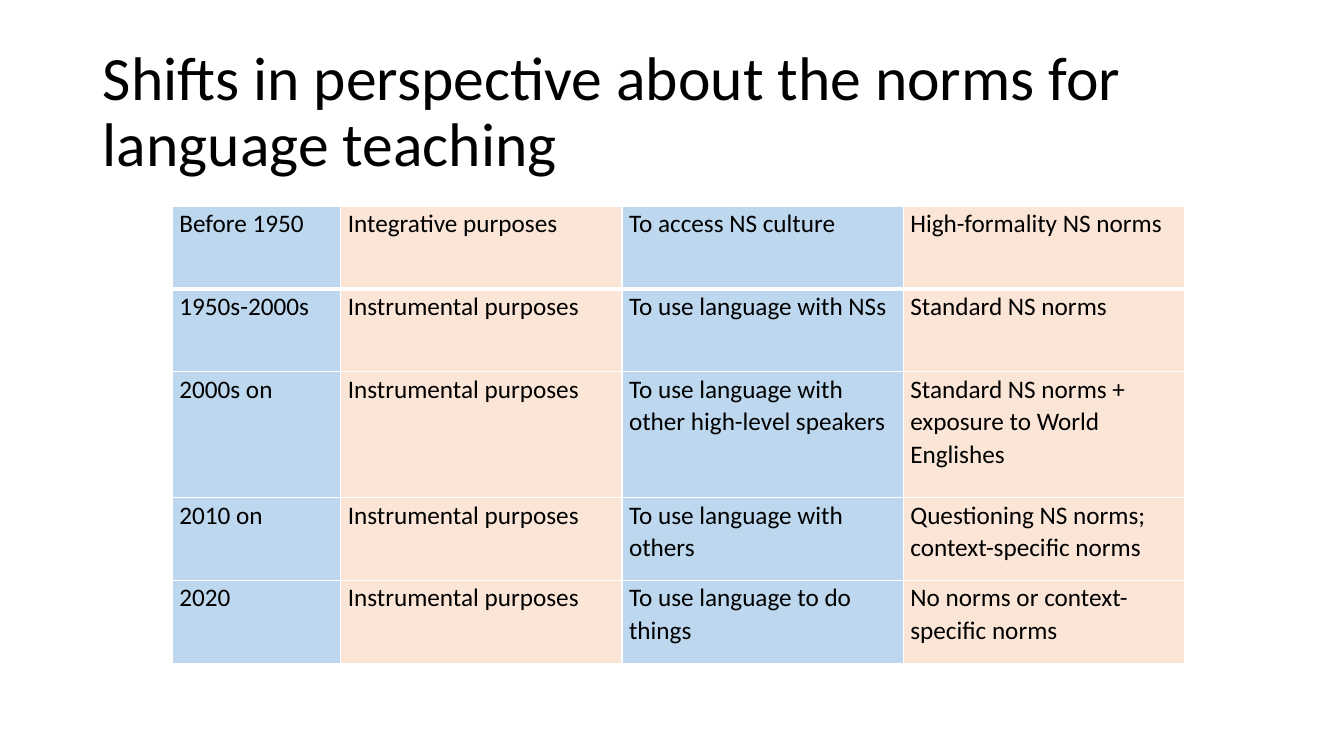
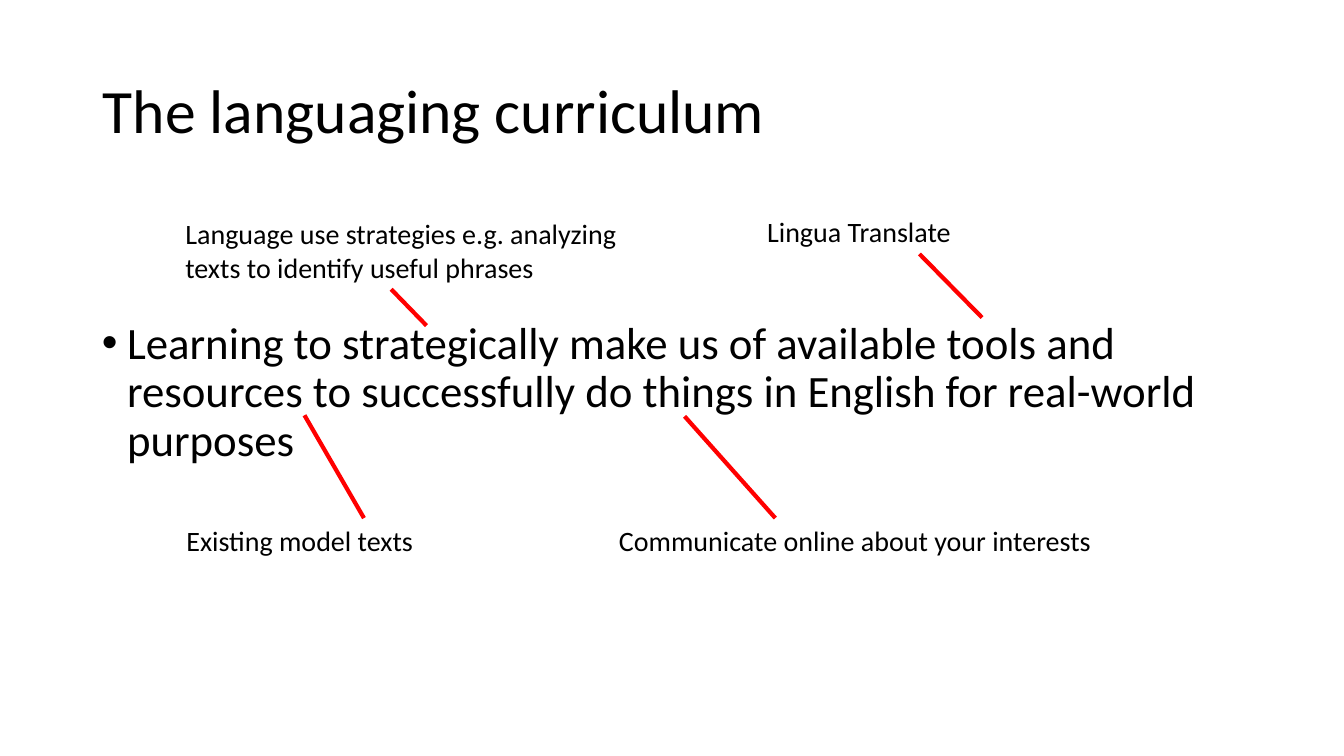
"""Build two slides on norms for language teaching and the languaging curriculum."""
from lxml.etree import SubElement
from pptx import Presentation
from pptx.dml.color import RGBColor
from pptx.enum.shapes import MSO_CONNECTOR as Connector
from pptx.enum.text import MSO_ANCHOR as Anchor, MSO_AUTO_SIZE as AutoSize, PP_ALIGN as Align
from pptx.oxml import parse_xml
from pptx.oxml.ns import nsdecls, qn
from pptx.util import Inches, Pt

BLACK, WHITE, RED = "000000", "FFFFFF", "FF0000"
BLUE, PEACH = "BDD7EE", "FBE5D6"
TITLE_ONLY, TITLE_AND_BODY = 5, 1


def color(value):
    return RGBColor.from_string(value)


def write_text(frame, text, size=20, ink=BLACK, font="Calibri", spacing=1.0,
               before=0, anchor=Anchor.TOP, fit=AutoSize.NONE):
    frame.word_wrap = True
    frame.auto_size = fit
    frame.vertical_anchor = anchor
    paragraph = frame.paragraphs[0]
    paragraph.alignment = Align.LEFT
    paragraph.line_spacing = spacing
    paragraph.space_before = Pt(before)
    run = paragraph.add_run()
    run.text = text
    run.font.size = Pt(size)
    run.font.name = font
    run.font.color.rgb = color(ink)
    return paragraph


class Deck:
    def __init__(self):
        self.presentation = Presentation()
        self.presentation.slide_width = Inches(13.33)
        self.presentation.slide_height = Inches(7.5)
        self.slide = None

    def add_slide(self, title, layout):
        layouts = self.presentation.slide_layouts
        self.slide = self.presentation.slides.add_slide(layouts[layout])
        shape = self.slide.shapes.title
        self.place(shape, 0.92, 0.4, 11.5, 1.45)
        write_text(shape.text_frame, title, size=44, spacing=0.9, anchor=Anchor.MIDDLE)

    def place(self, shape, left, top, width, height):
        shape.left, shape.top = Inches(left), Inches(top)
        shape.width, shape.height = Inches(width), Inches(height)

    def add_bullet(self, text, left, top, width, height):
        shape = self.slide.placeholders[1]
        self.place(shape, left, top, width, height)
        paragraph = write_text(shape.text_frame, text, size=32, spacing=0.9, before=10)
        properties = paragraph._p.get_or_add_pPr()
        properties.set("marL", str(Inches(0.25)))
        properties.set("indent", str(-Inches(0.25)))

    def add_note(self, text, left, top, width, height):
        shape = self.slide.shapes.add_textbox(
            Inches(left), Inches(top), Inches(width), Inches(height))
        write_text(shape.text_frame, text, fit=AutoSize.SHAPE_TO_FIT_TEXT)

    def add_line(self, start, end):
        connector = self.slide.shapes.add_connector(
            Connector.STRAIGHT, *map(Inches, (*start, *end)))
        connector.line.color.rgb = color(RED)
        connector.line.width = Pt(3)
        SubElement(connector._element.spPr, qn("a:effectLst"))

    def add_table(self, rows, left, top, widths, heights, fills):
        table = self.slide.shapes.add_table(
            len(rows), len(widths), Inches(left), Inches(top),
            Inches(sum(widths)), Inches(sum(heights))).table
        table.first_row = table.horz_banding = False
        for column, width in zip(table.columns, widths):
            column.width = Inches(width)
        for row, height in zip(table.rows, heights):
            row.height = Inches(height)
        for row_index, texts in enumerate(rows):
            top_line = 3 if row_index == 1 else 1
            bottom_line = 3 if row_index == 0 else 1
            for column_index, text in enumerate(texts):
                cell = table.cell(row_index, column_index)
                self.fill_cell(cell, text, fills[column_index % len(fills)])
                self.border_cell(cell, L=1, R=1, T=top_line, B=bottom_line)

    def fill_cell(self, cell, text, fill):
        cell.margin_left = cell.margin_right = Inches(0.07)
        cell.margin_top = cell.margin_bottom = 0
        cell.fill.solid()
        cell.fill.fore_color.rgb = color(fill)
        write_text(cell.text_frame, text, size=18, spacing=1.07)

    def border_cell(self, cell, **widths):
        properties = cell._tc.get_or_add_tcPr()
        for index, (side, width) in enumerate(widths.items()):
            properties.insert(index, parse_xml(
                f'<a:ln{side} {nsdecls("a")} w="{Pt(width)}"><a:solidFill>'
                f'<a:srgbClr val="{WHITE}"/></a:solidFill></a:ln{side}>'))


def main():
    deck = Deck()

    deck.add_slide("Shifts in perspective about the norms for language teaching", TITLE_ONLY)
    instrumental = "Instrumental purposes"
    periods = [
        ("Before 1950", "Integrative purposes", "To access NS culture",
         "High-formality NS norms"),
        ("1950s-2000s", instrumental, "To use language with NSs", "Standard NS norms"),
        ("2000s on", instrumental, "To use language with other high-level speakers",
         "Standard NS norms + exposure to World Englishes"),
        ("2010 on", instrumental, "To use language with others",
         "Questioning NS norms; context-specific norms"),
        ("2020", instrumental, "To use language to do things",
         "No norms or context-specific norms"),
    ]
    deck.add_table(periods, 1.71, 2.05, widths=[1.67] + [2.79] * 3,
                   heights=[0.82, 0.82, 1.25, 0.82, 0.82], fills=(BLUE, PEACH))

    deck.add_slide("The languaging curriculum", TITLE_AND_BODY)
    deck.add_bullet("Learning to strategically make us of available tools and resources "
                    "to successfully do things in English for real-world purposes",
                    0.91, 3.13, 11.5, 1.73)
    notes = [
        ("Language use strategies e.g. analyzing texts to identify useful phrases",
         (1.74, 2.1, 4.97, 0.77), (4.23, 3.23), (3.88, 2.87)),
        ("Lingua Translate", (7.51, 2.08, 3.94, 0.44), (9.74, 3.15), (9.12, 2.52)),
        ("Existing model texts", (1.75, 5.14, 3.1, 0.44), (3.61, 5.14), (3.02, 4.12)),
        ("Communicate online about your interests",
         (6.04, 5.14, 4.9, 0.44), (7.69, 5.14), (6.79, 4.13)),
    ]
    for text, box, start, end in notes:
        deck.add_note(text, *box)
        deck.add_line(start, end)

    deck.presentation.save("out.pptx")


if __name__ == "__main__":
    main()
